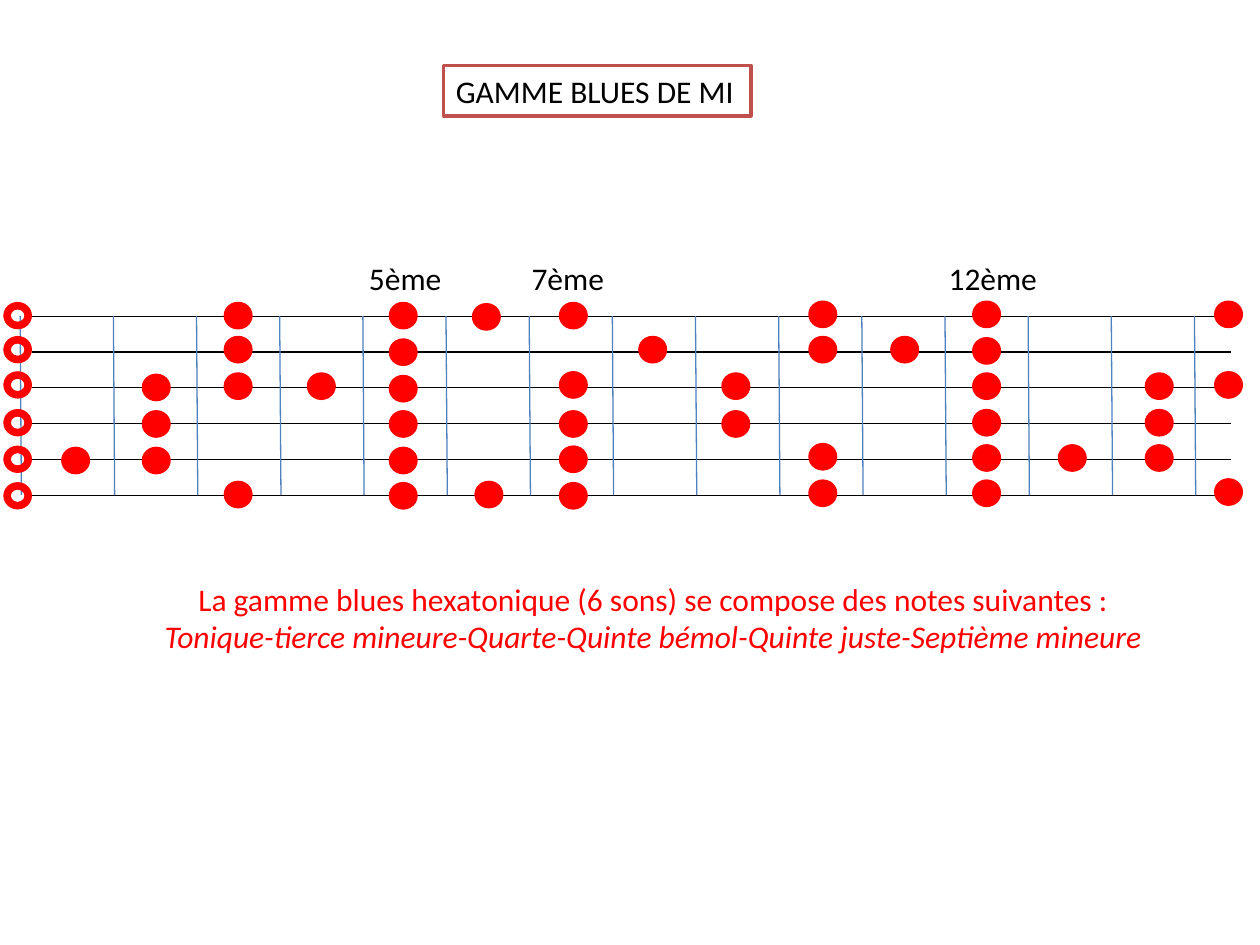
from pptx import Presentation
from pptx.dml.color import RGBColor
from pptx.enum.shapes import MSO_CONNECTOR, MSO_SHAPE
from pptx.enum.text import MSO_AUTO_SIZE, PP_ALIGN
from pptx.oxml.ns import qn
from pptx.util import Inches, Pt

STRAIGHT = MSO_CONNECTOR.STRAIGHT
FRETTED, OPEN = MSO_SHAPE.OVAL, MSO_SHAPE.DONUT
FIT_SHAPE = MSO_AUTO_SIZE.SHAPE_TO_FIT_TEXT
LEFT, CENTER = PP_ALIGN.LEFT, PP_ALIGN.CENTER

BLACK = RGBColor(0x00, 0x00, 0x00)
WHITE = RGBColor(0xFF, 0xFF, 0xFF)
RED = RGBColor(0xFF, 0x00, 0x00)
FRET_BLUE = RGBColor(0x4F, 0x81, 0xBD)
FRAME_RED = RGBColor(0xC0, 0x50, 0x4D)

NECK_TOP, NECK_BOTTOM = 2.51, 3.93
NECK_LEFT, NECK_RIGHT = 0.25, 9.77
STRING_COUNT, FRET_COUNT = 6, 14
STRING_GAP = (NECK_BOTTOM - NECK_TOP) / (STRING_COUNT - 1)
FRET_GAP = 0.66
NUT = 0.17

OPEN_LEFT = 0.03
OPEN_TOPS = [2.4, 2.67, 2.95, 3.25, 3.54, 3.83]
NOTE_TOPS_BY_LEFT = {
    0.49: [3.55],
    1.13: [2.97, 3.26, 3.55],
    1.78: [2.4, 2.67, 2.96, 3.82],
    2.44: [2.96],
    3.09: [2.4, 2.69, 2.98, 3.26, 3.55, 3.83],
    3.75: [2.41],
    3.77: [3.82],
    4.44: [2.4, 2.95, 3.26, 3.54, 3.83],
    5.07: [2.67],
    5.73: [2.96, 3.26],
    6.42: [2.39, 2.67, 3.52, 3.81],
    7.07: [2.67],
    7.72: [2.39, 2.68, 2.96, 3.25, 3.53, 3.81],
    8.4: [3.53],
    9.09: [2.96, 3.25, 3.53],
    9.64: [2.39, 2.95, 3.8],
}
POSITIONS = [("5ème", 2.83, 0.78), ("7ème", 4.12, 0.78), ("12ème", 7.43, 0.91)]
EXPLANATION = [
    ("La gamme blues hexatonique (6 sons) se compose des notes suivantes :", False),
    ("Tonique-tierce mineure-Quarte-Quinte bémol-Quinte juste-Septième mineure", True),
]


class FretboardSlide:
    """Draws the parts of a guitar scale diagram in one style."""

    font = {"name": "Calibri", "size": Pt(18)}
    note_width, note_height = Inches(0.22), Inches(0.21)

    def __init__(self, slide):
        self.shapes = slide.shapes

    def line(self, x1, y1, x2, y2, color):
        connector = self.shapes.add_connector(
            STRAIGHT, Inches(x1), Inches(y1), Inches(x2), Inches(y2))
        connector.line.color.rgb = color
        connector.line.width = Pt(0.75)
        properties = connector._element.spPr
        properties.append(properties.makeelement(qn("a:effectLst"), {}))

    def note(self, kind, left, top, outline):
        note = self.shapes.add_shape(
            kind, Inches(left), Inches(top), self.note_width, self.note_height)
        note.shadow.inherit = False
        note.fill.solid()
        note.fill.fore_color.rgb = RED
        note.line.color.rgb = RED
        note.line.width = Pt(outline)

    def text(self, paragraphs, left, top, width, height,
             color=BLACK, align=LEFT, wrap=False):
        box = self.shapes.add_textbox(
            Inches(left), Inches(top), Inches(width), Inches(height))
        frame = box.text_frame
        frame.word_wrap = wrap
        frame.auto_size = FIT_SHAPE
        for index, (wording, italic) in enumerate(paragraphs):
            paragraph = frame.add_paragraph() if index else frame.paragraphs[0]
            paragraph.alignment = align
            run = paragraph.add_run()
            run.text = wording
            for attribute, value in {**self.font, "italic": italic}.items():
                setattr(run.font, attribute, value)
            run.font.color.rgb = color
        return box

    def framed_title(self, wording, left, top, width, height):
        title = self.text([(wording, False)], left, top, width, height)
        title.fill.solid()
        title.fill.fore_color.rgb = WHITE
        title.line.color.rgb = FRAME_RED
        title.line.width = Pt(2)


def main():
    presentation = Presentation()
    presentation.slide_width = Inches(10)
    presentation.slide_height = Inches(7.5)
    board = FretboardSlide(
        presentation.slides.add_slide(presentation.slide_layouts[6]))

    for string in range(STRING_COUNT):
        y = NECK_TOP + string * STRING_GAP
        board.line(NECK_LEFT, y, NECK_RIGHT, y, BLACK)
    frets = [NECK_LEFT + FRET_GAP * fret for fret in range(1, FRET_COUNT + 1)]
    for x in [NUT, *frets]:
        board.line(x, NECK_BOTTOM, x - 0.01, NECK_TOP, FRET_BLUE)

    for top in OPEN_TOPS:
        board.note(OPEN, OPEN_LEFT, top, 0.5)
    for left, tops in NOTE_TOPS_BY_LEFT.items():
        for top in tops:
            board.note(FRETTED, left, top, 0.75)

    for position, left, width in POSITIONS:
        board.text([(position, False)], left, 2.01, width, 0.4)
    board.framed_title("GAMME BLUES DE MI", 3.52, 0.52, 2.44, 0.4)
    board.text(EXPLANATION, 1.06, 4.55, 8.25, 0.71, RED, CENTER, wrap=True)

    presentation.save("out.pptx")


if __name__ == "__main__":
    main()
